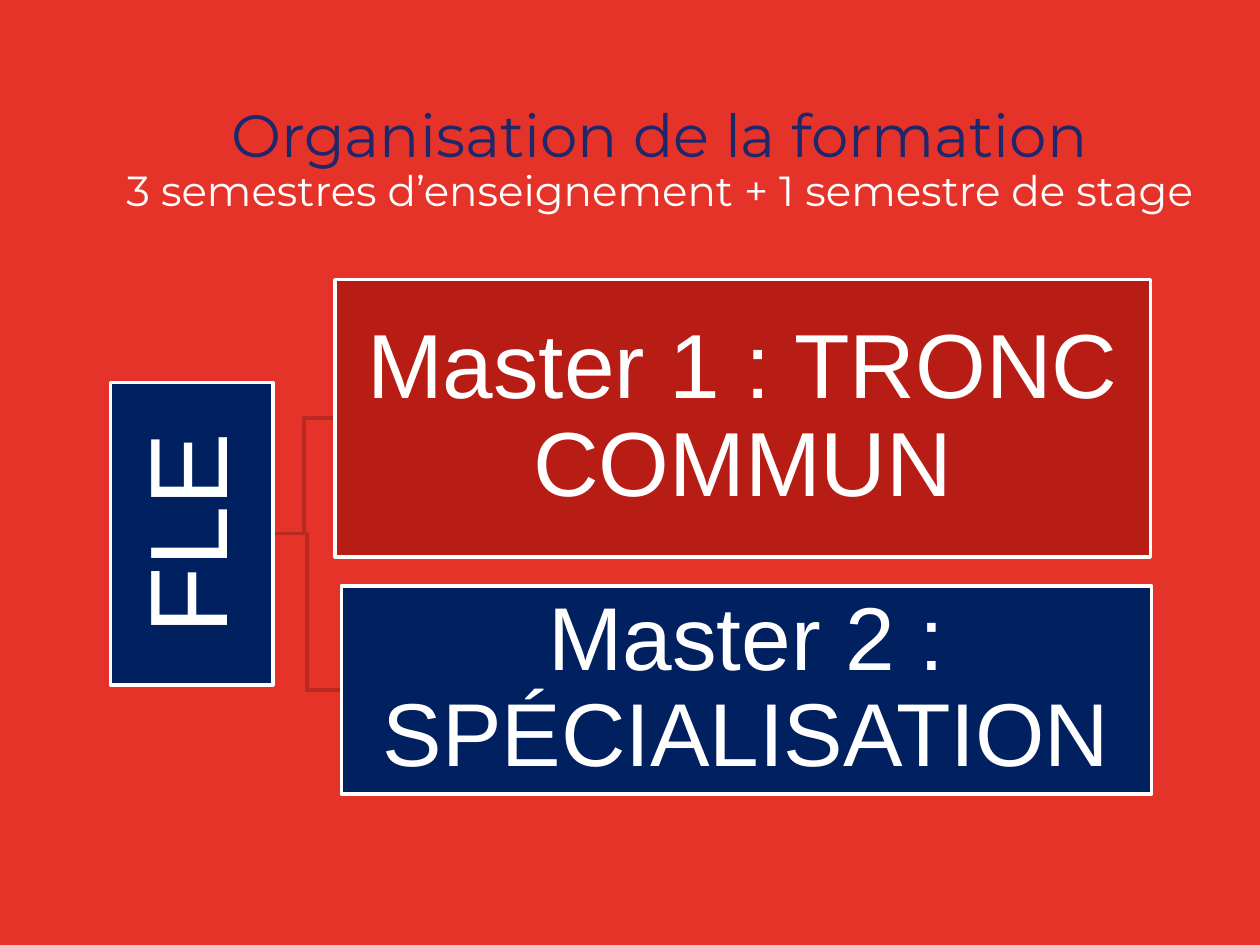
"""Build a slide showing the two-year structure of a master's programme."""
from dataclasses import dataclass

from lxml import etree
from pptx import Presentation
from pptx.dml.color import RGBColor
from pptx.enum.shapes import MSO_CONNECTOR, MSO_SHAPE
from pptx.enum.text import MSO_ANCHOR, PP_ALIGN
from pptx.oxml.ns import qn
from pptx.util import Inches, Pt

ELBOW = MSO_CONNECTOR.ELBOW
RECTANGLE = MSO_SHAPE.RECTANGLE
BOTTOM, MIDDLE = MSO_ANCHOR.BOTTOM, MSO_ANCHOR.MIDDLE
CENTER = PP_ALIGN.CENTER


@dataclass(frozen=True)
class Theme:
    background: str = "E6332A"
    navy: str = "002060"
    crimson: str = "B71D15"
    title: str = "1D2769"
    link: str = "B82922"
    white: str = "FFFFFF"
    heading_font: str = "Montserrat"
    body_font: str = "Arial"
    title_size: int = 34
    subtitle_size: int = 24
    root_size: int = 63
    master1_size: int = 52
    master2_size: int = 51
    line_width: int = 2
    line_spacing: float = 0.9
    inset: float = 0.04


@dataclass(frozen=True)
class Line:
    text: str
    size: int
    color: str
    font: str


@dataclass(frozen=True)
class Box:
    left: float
    top: float
    width: float
    height: float
    fill: str
    line: Line
    rotation: int = 0

    @property
    def middle(self) -> float:
        return self.top + self.height / 2

    @property
    def right_edge(self) -> float:
        span = self.height if self.rotation else self.width
        return self.left + (self.width + span) / 2


THEME = Theme()
TITLE_LINES = (
    Line("Organisation de la formation", THEME.title_size, THEME.title,
         THEME.heading_font),
    Line("3 semestres d’enseignement + 1 semestre de stage",
         THEME.subtitle_size, THEME.white, THEME.heading_font),
)
ROOT = Box(0.32, 3.59, 2.4, 1.29, THEME.navy,
           Line("FLE", THEME.root_size, THEME.white, THEME.body_font), 270)
YEARS = (
    Box(2.66, 2.22, 6.47, 2.2, THEME.crimson,
        Line("Master 1 : TRONC COMMUN", THEME.master1_size, THEME.white,
             THEME.body_font)),
    Box(2.71, 4.65, 6.43, 1.65, THEME.navy,
        Line("Master 2 : SPÉCIALISATION", THEME.master2_size, THEME.white,
             THEME.body_font)),
)


def rgb(value: str) -> RGBColor:
    return RGBColor.from_string(value)


def write_lines(tf, lines: tuple[Line, ...], anchor, vertical_inset: float) -> None:
    tf.word_wrap = True
    tf.vertical_anchor = anchor
    tf.margin_left = tf.margin_right = Inches(THEME.inset)
    tf.margin_top = tf.margin_bottom = Inches(vertical_inset)
    for i, line in enumerate(lines):
        p = tf.paragraphs[0] if i == 0 else tf.add_paragraph()
        p.text = line.text
        p.alignment = CENTER
        p.line_spacing = THEME.line_spacing
        p.font.name = line.font
        p.font.size = Pt(line.size)
        p.font.color.rgb = rgb(line.color)


def add_title(s) -> None:
    tb = s.shapes.add_textbox(Inches(0.47), Inches(1.04), Inches(9.53), Inches(0.67))
    write_lines(tb.text_frame, TITLE_LINES, BOTTOM, 0)


def add_box(s, box: Box) -> None:
    sp = s.shapes.add_shape(RECTANGLE, Inches(box.left), Inches(box.top),
                            Inches(box.width), Inches(box.height))
    sp.rotation = box.rotation
    sp.shadow.inherit = False
    sp.fill.solid()
    sp.fill.fore_color.rgb = rgb(box.fill)
    sp.line.color.rgb = rgb(THEME.white)
    sp.line.width = Pt(THEME.line_width)
    write_lines(sp.text_frame, (box.line,), MIDDLE, THEME.inset)


def add_link(s, start: Box, end: Box) -> None:
    link = s.shapes.add_connector(ELBOW, Inches(start.right_edge), Inches(start.middle),
                                  Inches(end.left), Inches(end.middle))
    link.line.color.rgb = rgb(THEME.link)
    link.line.width = Pt(THEME.line_width)
    etree.SubElement(link._element.spPr, qn("a:effectLst"))


def main() -> None:
    prs = Presentation()
    prs.slide_width, prs.slide_height = Inches(10), Inches(7.5)
    s = prs.slides.add_slide(prs.slide_layouts[6])
    s.background.fill.solid()
    s.background.fill.fore_color.rgb = rgb(THEME.background)
    add_title(s)
    for year in reversed(YEARS):
        add_link(s, ROOT, year)
    for box in (ROOT, *YEARS):
        add_box(s, box)
    prs.save("out.pptx")


if __name__ == "__main__":
    main()
